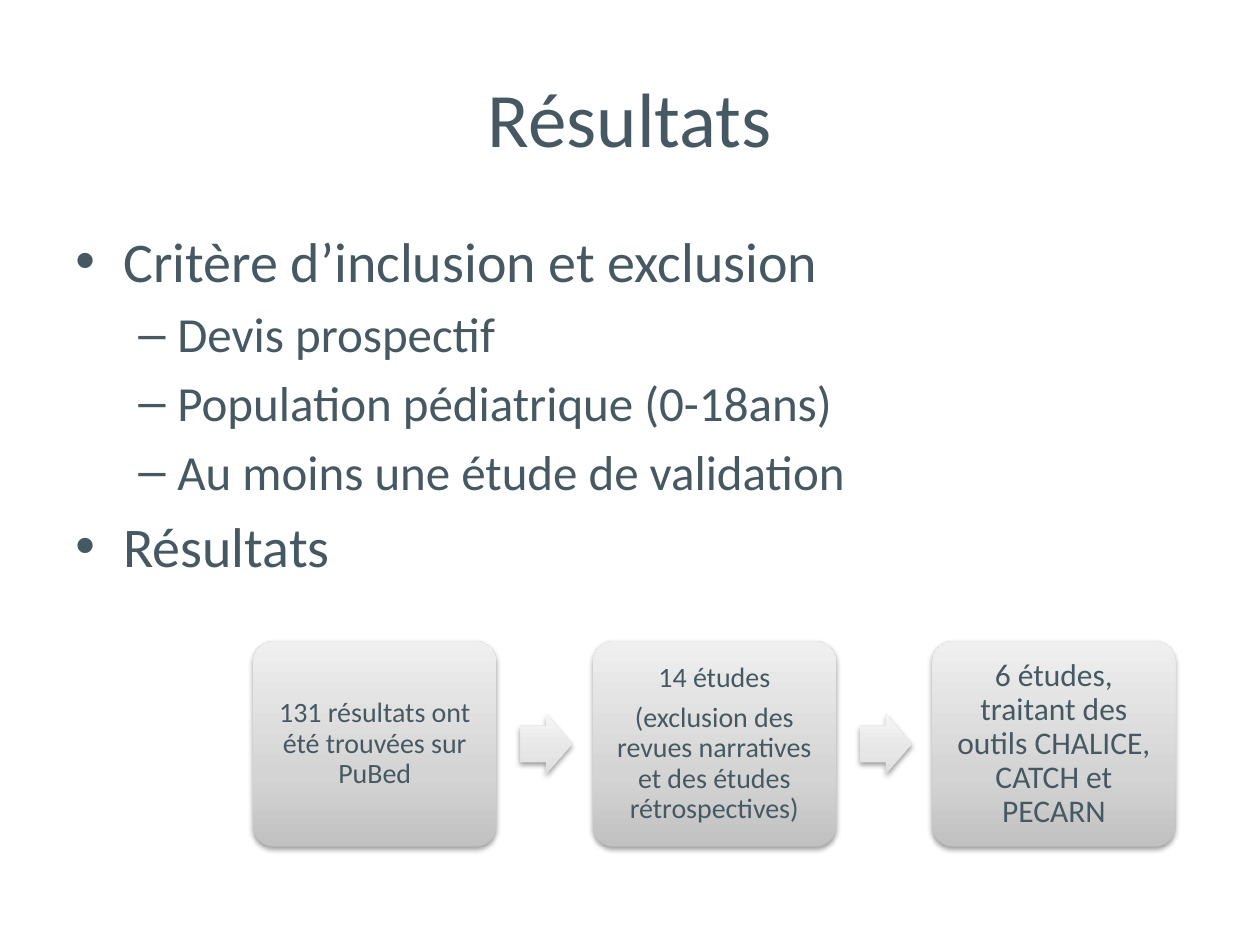
from dataclasses import dataclass

from lxml import etree
from pptx import Presentation
from pptx import util as u
from pptx.dml.color import RGBColor
from pptx.enum import shapes, text
from pptx.oxml.ns import qn


@dataclass(frozen=True)
class Theme:
    font: str = "Calibri"
    ink: str = "465962"
    title: int = 44
    levels: tuple = (32, 28)
    card: tuple = ((0, "C1C1C1"), (35, "D4D4D4"), (100, "EFEFEF"))
    arrow: tuple = ((0, "DDDDDD"), (35, "E6E6E6"), (100, "F5F5F5"))


THEME = Theme()
MARKS = (("•", 0.38, 0.38), ("–", 0.81, 0.31))
POINTS = (
    (0, "Critère d’inclusion et exclusion"),
    (1, "Devis prospectif"),
    (1, "Population pédiatrique (0-18ans)"),
    (1, "Au moins une étude de validation"),
    (0, "Résultats"),
)
STEPS = (
    (16, ["131 résultats ont été trouvées sur PuBed"]),
    (16, ["14 études",
          "(exclusion des revues narratives et des études rétrospectives)"]),
    (18, ["6 études, traitant des outils CHALICE, CATCH et PECARN"]),
)


def apply(item, **form):
    for name, value in form.items():
        setattr(item, name, value)


def child(node, tag, **attrs):
    part = etree.SubElement(node, qn(tag))
    for name, value in attrs.items():
        part.set(name, str(value))
    return part


def write(para, words, size, **form):
    run = para.add_run()
    run.text = words
    apply(run.font, name=THEME.font, size=u.Pt(size))
    run.font.color.rgb = RGBColor.from_string(THEME.ink)
    apply(para, **form)


def paras(frame, items):
    """Yield a paragraph of the frame with each item."""
    for i, item in enumerate(items):
        yield (frame.add_paragraph() if i else frame.paragraphs[0]), item


def frame_in(slide, box):
    frame = slide.shapes.add_textbox(*map(u.Inches, box)).text_frame
    frame.word_wrap = True
    return frame


def solid(slide, kind, box, stops, adjust):
    """Add a shape with an upward gradient and a soft shadow below."""
    shape = slide.shapes.add_shape(kind, *map(u.Inches, box))
    for i, value in enumerate(adjust):
        shape.adjustments[i] = value
    shape.line.fill.background()
    shape.fill.gradient()
    shape.fill.gradient_angle = 90
    props = shape._element.spPr
    ramp = props.find(".//" + qn("a:gsLst"))
    for old in list(ramp):
        ramp.remove(old)
    for pos, color in stops:
        stop = child(ramp, "a:gs", pos=pos * 1000)
        child(stop, "a:srgbClr", val=color)
    shape.shadow.inherit = False
    shade = child(props.find(qn("a:effectLst")), "a:outerShdw",
                  blurRad=u.Pt(3.1), dist=u.Pt(1.6), dir=5400000,
                  rotWithShape=0)
    child(child(shade, "a:srgbClr", val="000000"), "a:alpha", val=38000)
    return shape


def title(slide, box, words):
    frame = frame_in(slide, box)
    frame.vertical_anchor = text.MSO_ANCHOR.MIDDLE
    write(frame.paragraphs[0], words, THEME.title,
          alignment=text.PP_ALIGN.CENTER)


def outline(slide, box, points):
    frame = frame_in(slide, box)
    for i, (para, (level, words)) in enumerate(paras(frame, points)):
        mark, left, hang = MARKS[level]
        props = para._p.get_or_add_pPr()
        props.set("marL", str(u.Inches(left)))
        props.set("indent", str(-u.Inches(hang)))
        child(props, "a:buFont", typeface="Arial")
        child(props, "a:buChar", char=mark)
        size = THEME.levels[level]
        write(para, words, size, level=level,
              space_before=u.Pt(0.2 * size if i else 0))


def card(slide, box, size, lines):
    shape = solid(slide, shapes.MSO_SHAPE.ROUNDED_RECTANGLE, box,
                  THEME.card, [0.1])
    frame = shape.text_frame
    pad = u.Inches(0.07)
    apply(frame, word_wrap=True, vertical_anchor=text.MSO_ANCHOR.MIDDLE,
          margin_left=pad, margin_right=pad, margin_top=pad,
          margin_bottom=pad)
    for para, words in paras(frame, lines):
        write(para, words, size, alignment=text.PP_ALIGN.CENTER,
              line_spacing=0.9, space_after=u.Pt(0.35 * size))


def flow(slide, box, steps):
    """Spread the cards evenly over the box, with an arrow in each gap."""
    left, top, width, height = box
    wide, arrow_w, arrow_h, gap = 1.93, 0.41, 0.48, 0.19
    pitch = (width - wide) / (len(steps) - 1)
    for i, (size, lines) in enumerate(steps):
        x = left + i * pitch
        if i:
            spot = (x - pitch + wide + gap, top + (height - arrow_h) / 2,
                    arrow_w, arrow_h)
            solid(slide, shapes.MSO_SHAPE.RIGHT_ARROW, spot,
                  THEME.arrow, [0.6, 0.5])
        card(slide, (x, top, wide, height), size, lines)


def main():
    deck = Presentation()
    apply(deck, slide_width=u.Inches(10), slide_height=u.Inches(7.5))
    slide = deck.slides.add_slide(deck.slide_layouts[6])
    title(slide, (0.5, 0.3, 9, 1.25), "Résultats")
    outline(slide, (0.5, 1.75, 9, 4.95), POINTS)
    flow(slide, (2.01, 5.09, 7.32, 1.63), STEPS)
    deck.save("out.pptx")


if __name__ == "__main__":
    main()
